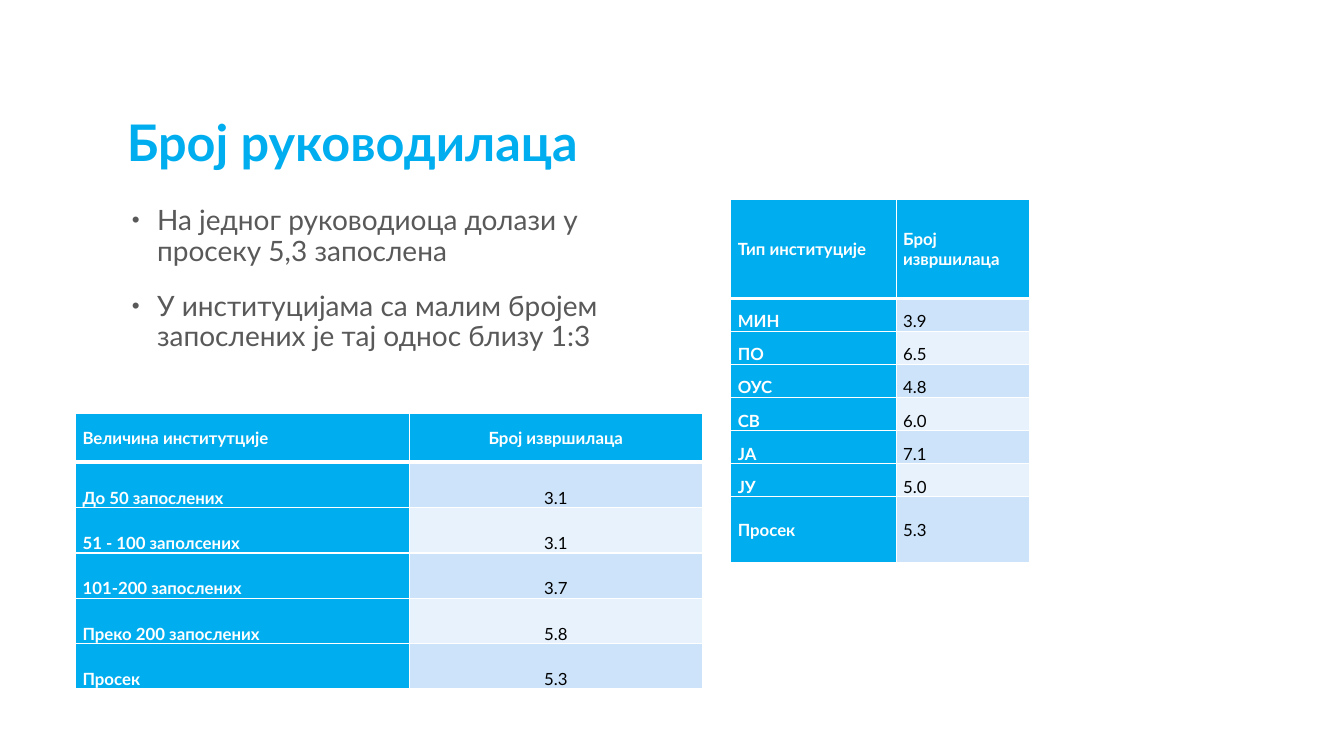
from dataclasses import dataclass

from lxml import etree
from pptx import Presentation
from pptx.dml.color import RGBColor
from pptx.enum.text import MSO_ANCHOR, PP_ALIGN
from pptx.oxml.ns import qn
from pptx.util import Pt

LEFT, CENTER = PP_ALIGN.LEFT, PP_ALIGN.CENTER
TOP, MIDDLE, BOTTOM = MSO_ANCHOR.TOP, MSO_ANCHOR.MIDDLE, MSO_ANCHOR.BOTTOM
FONT = "Lato"
COLORS = {
    "accent": "00AEEF",
    "body": "595959",
    "white": "FFFFFF",
    "black": "000000",
    "band_dark": "CCE3F9",
    "band_light": "E7F2FC",
}


@dataclass
class TableSpec:
    left: float
    top: float
    columns: list[float]
    heights: list[float]
    rows: list[tuple[str, str]]
    value_align: PP_ALIGN
    last_anchor: MSO_ANCHOR


TABLES = [
    TableSpec(
        522, 142.6, [118.1, 95], [70.6] + [23.6] * 6 + [47.5],
        [("Тип институције", "Број извршилаца"), ("МИН", "3.9"), ("ПО", "6.5"),
         ("ОУС", "4.8"), ("СВ", "6.0"), ("ЈА", "7.1"), ("ЈУ", "5.0"),
         ("Просек", "5.3")],
        LEFT, MIDDLE),
    TableSpec(
        54, 295.2, [238.3, 209.5], [35] + [32.4] * 5,
        [("Величина институтције", "Број извршилаца"),
         ("До 50 запослених", "3.1"), ("51 - 100 заполсених", "3.1"),
         ("101-200 запослених", "3.7"), ("Преко 200 запослених", "5.8"),
         ("Просек", "5.3")],
        CENTER, BOTTOM),
]
BULLETS = [
    "На једног руководиоца долази у просеку 5,3 запослена",
    "У институцијама са малим бројем запослених је тај однос близу 1:3",
]


def write(para, text: str, *, size: float, color: str, bold: bool = False,
          align: PP_ALIGN = LEFT, spacing: float = 1.0, before: float = 0) -> None:
    """Fill a paragraph with one formatted span."""
    para.alignment = align
    para.line_spacing = spacing
    para.space_before = Pt(before)
    span = para.add_run()
    span.text = text
    span.font.name = FONT
    span.font.size = Pt(size)
    span.font.bold = bold
    span.font.color.rgb = RGBColor.from_string(COLORS[color])


def add_box(page, left: float, top: float, width: float, height: float,
            anchor: MSO_ANCHOR):
    box = page.shapes.add_textbox(Pt(left), Pt(top), Pt(width), Pt(height))
    box.text_frame.word_wrap = True
    box.text_frame.vertical_anchor = anchor
    return box.text_frame


def add_bullet(para) -> None:
    props = para._p.get_or_add_pPr()
    props.set("marL", str(Pt(21.6)))
    props.set("indent", str(Pt(-18)))
    color = etree.SubElement(props, qn("a:buClr"))
    etree.SubElement(color, qn("a:srgbClr"), val=COLORS["body"])
    etree.SubElement(props, qn("a:buSzPct"), val="80000")
    etree.SubElement(props, qn("a:buFont"), typeface="Arial")
    etree.SubElement(props, qn("a:buChar"), char="•")


def set_borders(cell, top: float, bottom: float) -> None:
    props = cell._tc.get_or_add_tcPr()
    widths = {"lnL": 1, "lnR": 1, "lnT": top, "lnB": bottom}
    for index, (side, width) in enumerate(widths.items()):
        line = etree.Element(qn(f"a:{side}"), w=str(Pt(width)))
        fill = etree.SubElement(line, qn("a:solidFill"))
        etree.SubElement(fill, qn("a:srgbClr"), val=COLORS["white"])
        props.insert(index, line)


def add_data_table(page, spec: TableSpec) -> None:
    last = len(spec.rows) - 1
    frame = page.shapes.add_table(
        len(spec.rows), len(spec.columns), Pt(spec.left), Pt(spec.top),
        Pt(sum(spec.columns)), Pt(sum(spec.heights)))
    table = frame.table
    for column, width in zip(table.columns, spec.columns):
        column.width = Pt(width)
    for r, (height, texts) in enumerate(zip(spec.heights, spec.rows)):
        table.rows[r].height = Pt(height)
        band = "band_dark" if r % 2 else "band_light"
        for c, text in enumerate(texts):
            cell = table.cell(r, c)
            strong = r == 0 or c == 0
            cell.margin_left = cell.margin_right = Pt(5)
            cell.margin_top = cell.margin_bottom = 0
            cell.vertical_anchor = (
                MIDDLE if r == 0 else spec.last_anchor if r == last else BOTTOM)
            cell.fill.solid()
            cell.fill.fore_color.rgb = RGBColor.from_string(
                COLORS["accent" if strong else band])
            set_borders(cell, top=3 if r == 1 else 1, bottom=3 if r == 0 else 1)
            write(cell.text_frame.paragraphs[0], text, size=12, bold=strong,
                  color="white" if strong else "black",
                  align=spec.value_align if c else LEFT)


def main() -> None:
    deck = Presentation()
    deck.slide_width, deck.slide_height = Pt(960), Pt(540)
    page = deck.slides.add_slide(deck.slide_layouts[6])

    # Title
    title = add_box(page, 83.5, 41.8, 684, 84.2, BOTTOM)
    write(title.paragraphs[0], "Број руководилаца", size=36, color="accent",
          bold=True, spacing=0.8)

    # Bullet points
    body = add_box(page, 83.5, 144, 401.8, 329.8, TOP)
    for index, text in enumerate(BULLETS):
        para = body.add_paragraph() if index else body.paragraphs[0]
        add_bullet(para)
        write(para, text, size=20, color="body", spacing=0.9,
              before=18 if index else 0)

    # Tables by institution type and size
    for spec in TABLES:
        add_data_table(page, spec)

    deck.save("out.pptx")


if __name__ == "__main__":
    main()
